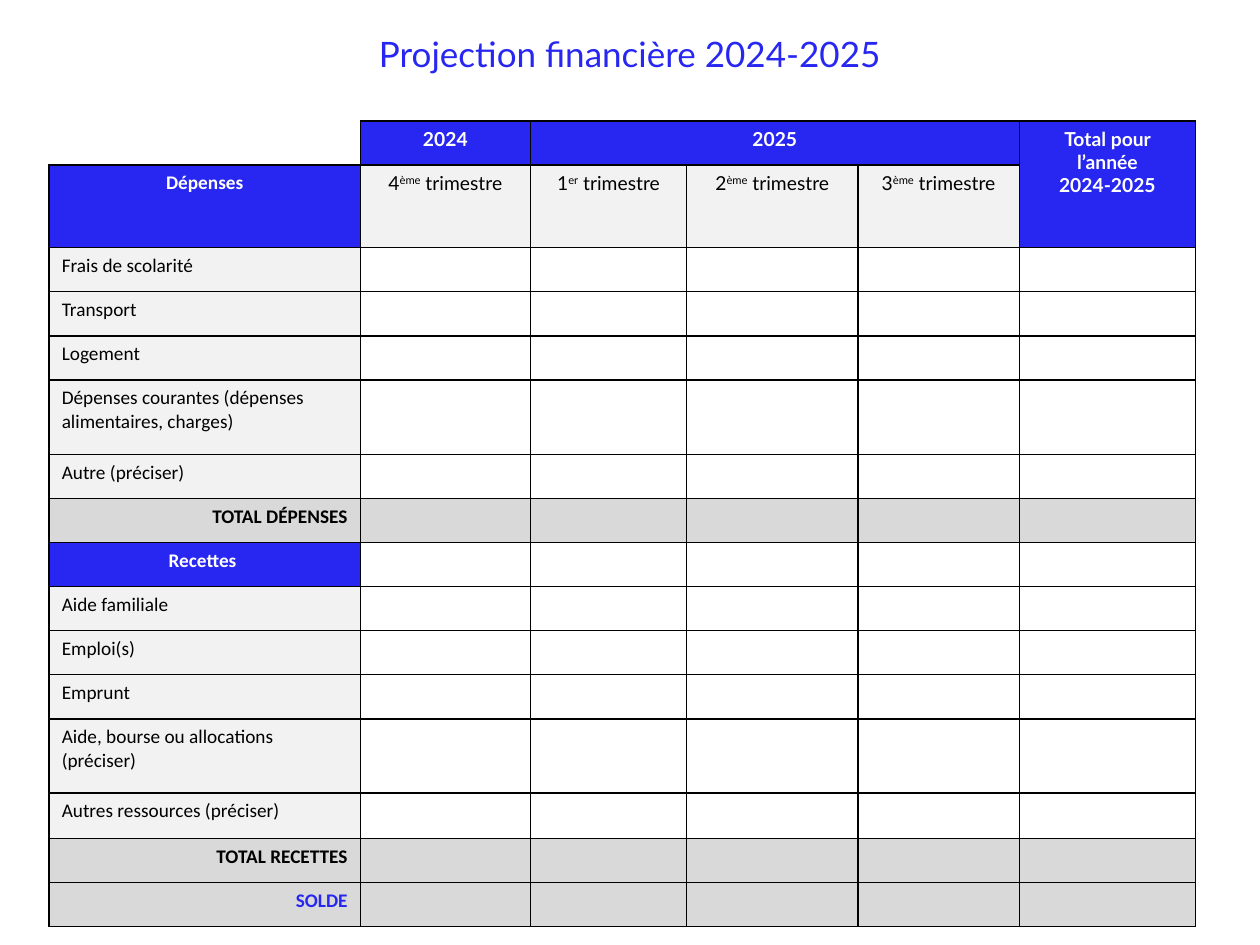
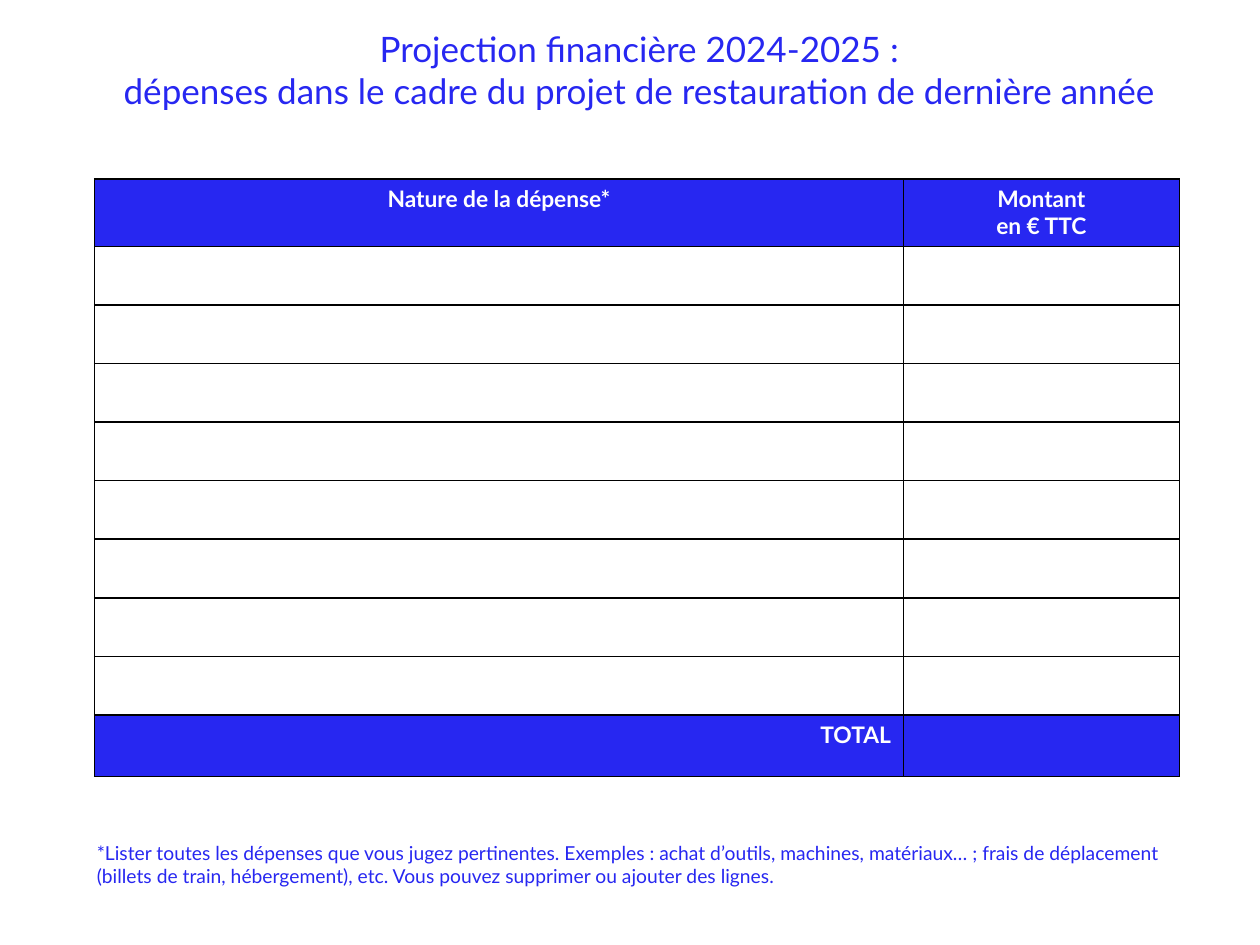
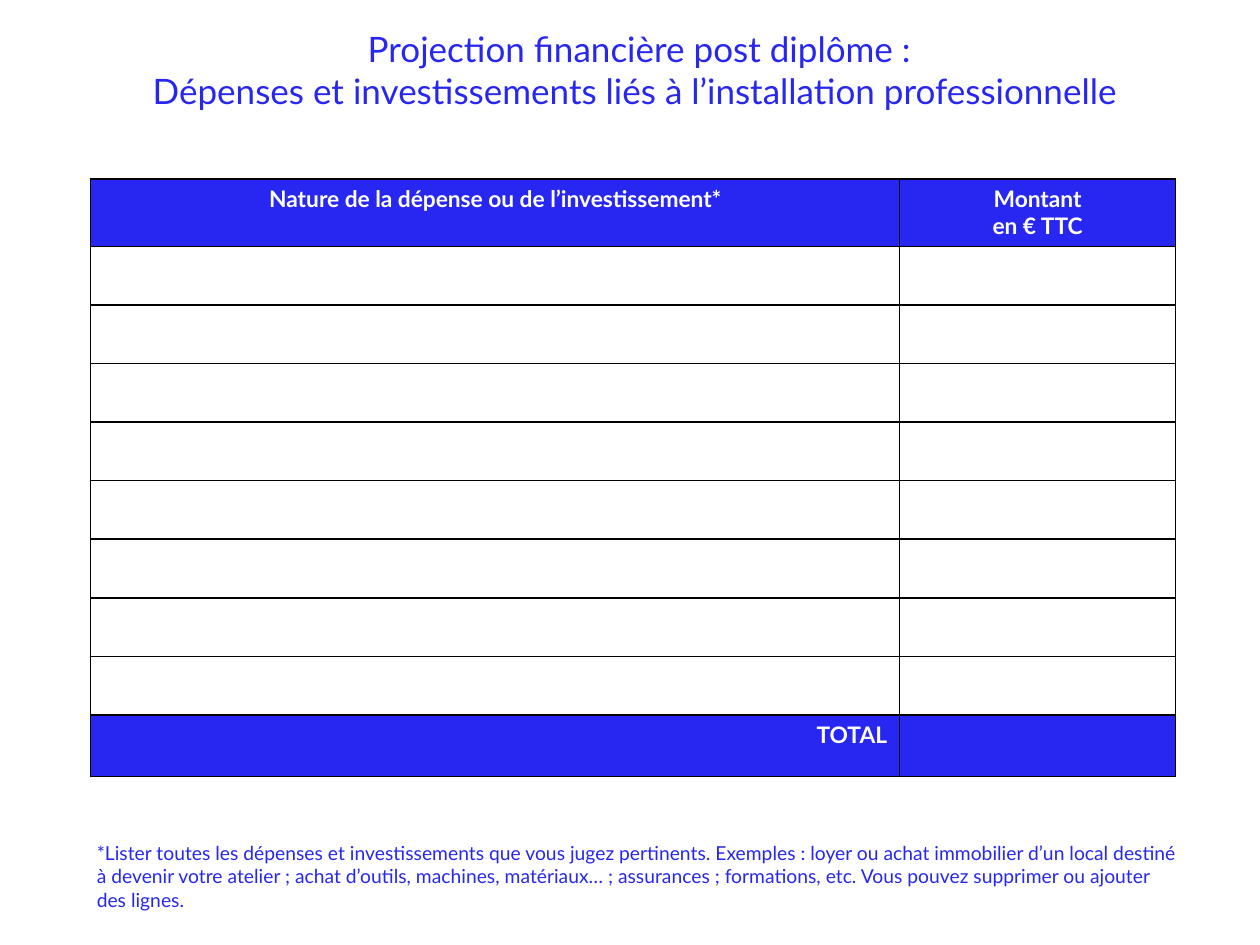
from dataclasses import dataclass

from lxml.etree import SubElement
from pptx import Presentation
from pptx.dml.color import RGBColor
from pptx.enum.text import MSO_AUTO_SIZE, PP_ALIGN
from pptx.oxml.ns import qn
from pptx.util import Inches, Pt


@dataclass(frozen=True)
class Theme:
    blue: str = "2727F1"
    white: str = "FFFFFF"
    black: str = "000000"
    pale: str = "F2F2F2"
    grey: str = "D9D9D9"
    main_font: str = "Lato"
    label_font: str = "Calibri"
    title_size: int = 20
    amount_size: int = 13
    body_size: int = 11
    border_width: int = 1


THEME = Theme()
GRID_COLUMNS, GRID_ROWS = 100, 75
SLIDE_WIDTH, SLIDE_HEIGHT = Inches(10), Inches(7.5)

BLUE_TEXT = {"name": THEME.main_font, "color": THEME.blue}
TITLE = {**BLUE_TEXT, "size": THEME.title_size, "align": PP_ALIGN.CENTER}
NOTE = {**BLUE_TEXT, "size": THEME.body_size, "align": PP_ALIGN.LEFT}

HEADING = {"name": THEME.main_font, "size": THEME.body_size, "bold": True,
           "color": THEME.white, "align": PP_ALIGN.CENTER, "fill": THEME.blue}
SECTION = {**HEADING, "name": THEME.label_font}
QUARTER = {**HEADING, "bold": False, "color": THEME.black, "fill": THEME.pale}
LABEL = {**QUARTER, "name": THEME.label_font, "align": PP_ALIGN.LEFT}
TOTAL = {**LABEL, "bold": True, "align": PP_ALIGN.RIGHT, "fill": THEME.grey}
BALANCE = {**TOTAL, "color": THEME.blue}
BLANK = {**LABEL, "fill": THEME.white}
CORNER = {**BLANK, "fill": None, "sides": "RB"}
AMOUNT_HEADING = {**HEADING, "size": THEME.amount_size}
AMOUNT_TOTAL = {**AMOUNT_HEADING, "align": PP_ALIGN.RIGHT}
AMOUNT_BLANK = {**BLANK, "size": THEME.amount_size}

BUDGET_COLUMNS = [24.7, 13.5, 12.4, 13.6, 12.8, 14]
BUDGET_LINES = [
    (3.5, "Frais de scolarité", LABEL),
    (3.5, "Transport", LABEL),
    (3.5, "Logement", LABEL),
    (5.9, "Dépenses courantes (dépenses alimentaires, charges)", LABEL),
    (3.5, "Autre (préciser)", LABEL),
    (3.5, "TOTAL DÉPENSES", TOTAL),
    (3.5, "Recettes ", SECTION),
    (3.5, "Aide familiale", LABEL),
    (3.5, "Emploi(s)", LABEL),
    (3.5, "Emprunt", LABEL),
    (5.9, "Aide, bourse ou allocations (préciser)", LABEL),
    (3.6, "Autres ressources (préciser)", LABEL),
    (3.5, "TOTAL RECETTES", TOTAL),
    (3.5, "SOLDE", BALANCE),
]
AMOUNT_COLUMNS = [64.2, 21.9]
AMOUNT_LINES = 8


def across(columns):
    return round(SLIDE_WIDTH * columns / GRID_COLUMNS)


def down(rows):
    return round(SLIDE_HEIGHT * rows / GRID_ROWS)


def write_text(frame, text, style):
    """Write one paragraph a line; every second part between bars is raised."""
    for index, line in enumerate(text.split("\n")):
        para = frame.add_paragraph() if index else frame.paragraphs[0]
        para.alignment = style["align"]
        if not line:
            SubElement(para._p, qn("a:endParaRPr"), sz=str(style["size"] * 100))
            continue
        for part, words in enumerate(line.split("|")):
            span = para.add_run()
            span.text = words
            formats = {"name": style["name"], "size": Pt(style["size"]),
                       "bold": style.get("bold", False)}
            for attribute, value in formats.items():
                setattr(span.font, attribute, value)
            span.font.color.rgb = RGBColor.from_string(style["color"])
            if part % 2:
                span.font._element.set("baseline", "30000")


def draw_borders(cell, sides):
    properties = cell._tc.get_or_add_tcPr()
    for side in "LRTB":
        line = SubElement(properties, qn(f"a:ln{side}"),
                          w=str(Pt(THEME.border_width)))
        if side in sides:
            fill = SubElement(line, qn("a:solidFill"))
            SubElement(fill, qn("a:srgbClr"), val=THEME.black)
        else:
            SubElement(line, qn("a:noFill"))


def fill_cell(cell, text, style):
    draw_borders(cell, style.get("sides", "LRTB"))
    if style["fill"]:
        cell.fill.solid()
        cell.fill.fore_color.rgb = RGBColor.from_string(style["fill"])
    else:
        cell.fill.background()
    write_text(cell.text_frame, text, style)


def add_grid(page, left, top, widths, heights, content):
    """Add a table whose content is rows of (text, style) pairs."""
    table = page.shapes.add_table(
        len(heights), len(widths), across(left), down(top),
        across(sum(widths)), down(sum(heights))).table
    table.first_row = table.horz_banding = False
    for column, width in zip(table.columns, widths):
        column.width = across(width)
    for row, height, entries in zip(table.rows, heights, content):
        row.height = down(height)
        for cell, (text, style) in zip(row.cells, entries):
            fill_cell(cell, text, style)
    return table


def add_text(page, left, top, width, height, text, style):
    box = page.shapes.add_textbox(across(left), down(top), across(width), down(height))
    frame = box.text_frame
    frame.word_wrap = True
    frame.auto_size = MSO_AUTO_SIZE.SHAPE_TO_FIT_TEXT
    write_text(frame, text, style)


def add_page(deck):
    return deck.slides.add_slide(deck.slide_layouts[6])


def add_budget_page(deck):
    page = add_page(deck)
    quarters = ["4|ème| trimestre", "1|er| trimestre",
                "2|ème| trimestre", "3|ème| trimestre"]
    content = [
        [("", CORNER), ("2024", HEADING), ("2025", HEADING), ("", HEADING),
         ("", HEADING), ("Total pour l’année\n2024-2025", HEADING)],
        [("Dépenses", SECTION), *((quarter, QUARTER) for quarter in quarters),
         ("", HEADING)],
    ]
    for _, label, style in BUDGET_LINES:
        value_style = TOTAL if style["fill"] == THEME.grey else BLANK
        content.append([(label, style)] + [("", value_style)] * 5)
    heights = [3.5, 4.7] + [height for height, _, _ in BUDGET_LINES]
    table = add_grid(page, 3.9, 9.6, BUDGET_COLUMNS, heights, content)
    table.cell(0, 2).merge(table.cell(0, 4))
    table.cell(0, 5).merge(table.cell(1, 5))
    add_text(page, 0, 2.1, GRID_COLUMNS, 4.4, "Projection financière 2024-2025", TITLE)


def add_amount_page(deck, title, heading, note, table_left, note_height):
    page = add_page(deck)
    content = [
        [(heading, AMOUNT_HEADING), ("Montant\nen € TTC", AMOUNT_HEADING)],
        *[[("", AMOUNT_BLANK)] * 2] * AMOUNT_LINES,
        [("TOTAL", AMOUNT_TOTAL), ("", AMOUNT_TOTAL)],
    ]
    heights = [4.9] + [4.65] * AMOUNT_LINES + [4.9]
    add_grid(page, table_left, 14.2, AMOUNT_COLUMNS, heights, content)
    add_text(page, 7.7, 1.7, 86.1, 7.7, title, TITLE)
    add_text(page, 6.7, 66.3, 88, note_height, note, NOTE)


def main():
    deck = Presentation()
    deck.slide_width, deck.slide_height = SLIDE_WIDTH, SLIDE_HEIGHT
    add_budget_page(deck)
    add_amount_page(
        deck,
        "Projection financière 2024-2025 :\n"
        "dépenses dans le cadre du projet de restauration de dernière année",
        "Nature de la dépense*",
        "*Lister toutes les dépenses que vous jugez pertinentes. Exemples : achat "
        "d’outils, machines, matériaux… ; frais de déplacement (billets de train, "
        "hébergement), etc. Vous pouvez supprimer ou ajouter des lignes.",
        table_left=7.5, note_height=4.7)
    add_amount_page(
        deck,
        "Projection financière post diplôme :\n"
        "Dépenses et investissements liés à l’installation professionnelle ",
        "Nature de la dépense ou de l’investissement*",
        "*Lister toutes les dépenses et investissements que vous jugez pertinents. "
        "Exemples : loyer ou achat immobilier d’un local destiné à devenir votre "
        "atelier ; achat d’outils, machines, matériaux… ; assurances ; formations, "
        "etc. Vous pouvez supprimer ou ajouter des lignes.",
        table_left=7.2, note_height=6.6)
    deck.save("out.pptx")


if __name__ == "__main__":
    main()
